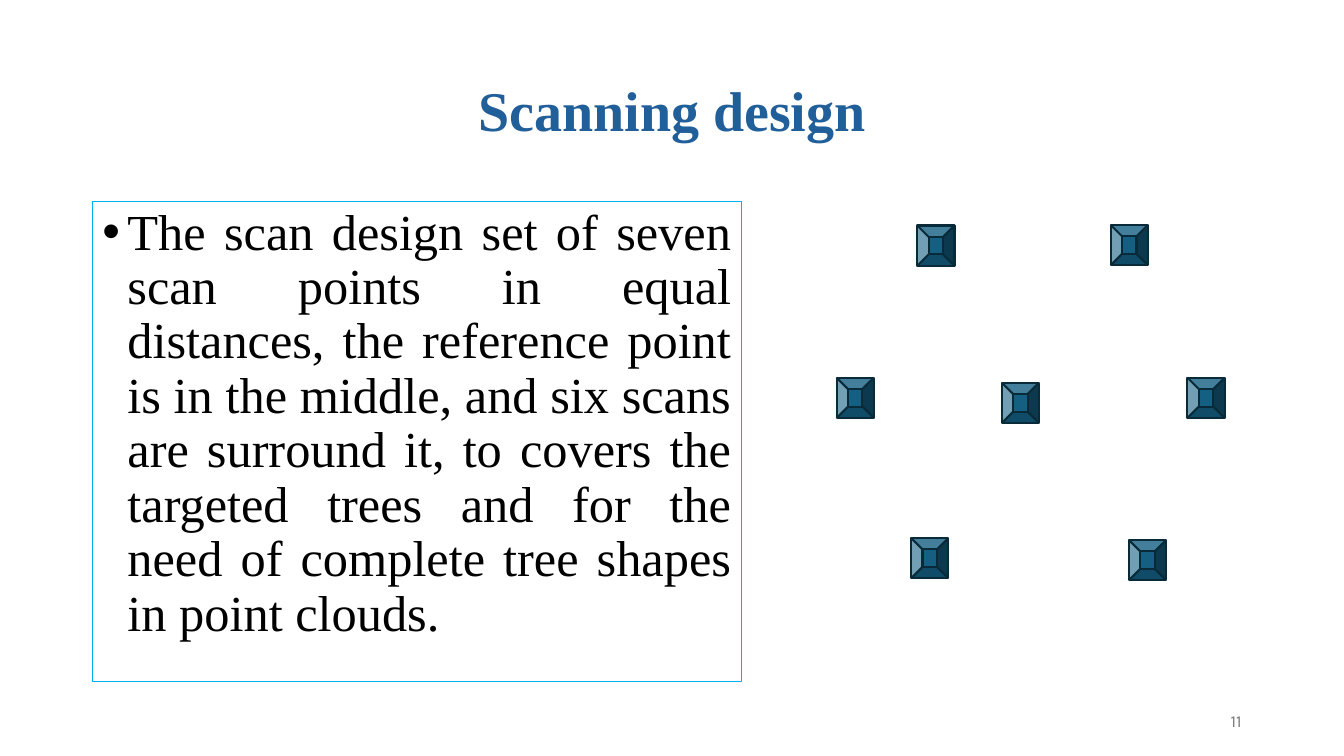
from lxml.etree import SubElement
from pptx import Presentation
from pptx.dml.color import RGBColor
from pptx.enum.shapes import MSO_SHAPE as Shape
from pptx.enum.text import MSO_ANCHOR as Anchor, MSO_AUTO_SIZE as AutoSize, PP_ALIGN as Align
from pptx.oxml.ns import qn
from pptx.util import Pt

TITLE_BLUE = RGBColor(0x21, 0x5F, 0x9A)
FRAME_BLUE = RGBColor(0x00, 0xB0, 0xF0)
POINT_FILL = RGBColor(0x15, 0x60, 0x82)
POINT_LINE = RGBColor(0x09, 0x2A, 0x39)
BLACK = RGBColor(0x00, 0x00, 0x00)
GREY = RGBColor(0x79, 0x79, 0x79)
SERIF = "Times New Roman"
POINT_SIZE = (26.6, 28.8)
SCAN_POINTS = [(118, 112.7), (250.6, 109.1), (208.8, 225), (53.3, 223.6),
               (0, 109.1), (57.6, 0.4), (195.8, 0)]
BODY = ("The scan design set of seven scan points in equal distances, the reference "
        "point is in the middle, and six scans are surround it, to covers the targeted "
        "trees and for the need of complete tree shapes in point clouds.")


def place(shape, box):
    """Move and size a shape to a box of left, top, width and height."""
    shape.left, shape.top, shape.width, shape.height = (Pt(length) for length in box)


def write(frame, text, font, size, color, align, anchor, bold=False):
    """Write one formatted run into a text frame and return its paragraph."""
    frame.word_wrap = True
    frame.auto_size = AutoSize.NONE
    frame.vertical_anchor = anchor
    paragraph = frame.paragraphs[0]
    paragraph.alignment = align
    run = paragraph.add_run()
    run.text = text
    run.font.name = font
    run.font.size = Pt(size)
    run.font.bold = bold
    run.font.color.rgb = color
    return paragraph


def add_title(slide, box):
    """Fill the title placeholder."""
    place(slide.shapes.title, box)
    paragraph = write(slide.shapes.title.text_frame, "Scanning design", SERIF, 40,
                      TITLE_BLUE, Align.CENTER, Anchor.MIDDLE, bold=True)
    paragraph.line_spacing = 0.9


def add_description(slide, box):
    """Add the framed, justified bullet text."""
    shape = slide.shapes.add_textbox(*(Pt(length) for length in box))
    shape.line.color.rgb = FRAME_BLUE
    shape.line.width = Pt(0.75)
    paragraph = write(shape.text_frame, BODY, SERIF, 36, BLACK, Align.JUSTIFY, Anchor.TOP)
    paragraph.line_spacing = 0.9
    paragraph.space_before = Pt(10)
    properties = paragraph._p.get_or_add_pPr()
    properties.set("marL", str(Pt(18)))
    properties.set("indent", str(-Pt(18)))
    SubElement(properties, qn("a:buFont"), typeface="Arial")
    SubElement(properties, qn("a:buChar"), char="•")


def add_scan_points(slide, left, top):
    """Add the reference point and the six scan points around it."""
    for across, down in SCAN_POINTS:
        box = (left + across, top + down, *POINT_SIZE)
        point = slide.shapes.add_shape(Shape.BEVEL, *(Pt(length) for length in box))
        point.adjustments[0] = 0.305
        point.shadow.inherit = False
        point.fill.solid()
        point.fill.fore_color.rgb = POINT_FILL
        point.line.color.rgb = POINT_LINE
        point.line.width = Pt(1.5)


def add_page_number(slide, box):
    """Add the page number at the bottom right."""
    shape = slide.shapes.add_textbox(*(Pt(length) for length in box))
    write(shape.text_frame, "11", "Karla", 12, GREY, Align.RIGHT, Anchor.MIDDLE)


def main():
    """Build and save the slide."""
    presentation = Presentation()
    presentation.slide_width, presentation.slide_height = Pt(960), Pt(540)
    slide = presentation.slides.add_slide(presentation.slide_layouts[5])
    add_title(slide, (66, 28.8, 828, 104.4))
    add_description(slide, (66, 144, 463.7, 342.7))
    add_page_number(slide, (678, 500.4, 216, 28.8))
    add_scan_points(slide, 597.6, 160.7)
    presentation.save("out.pptx")


if __name__ == "__main__":
    main()
